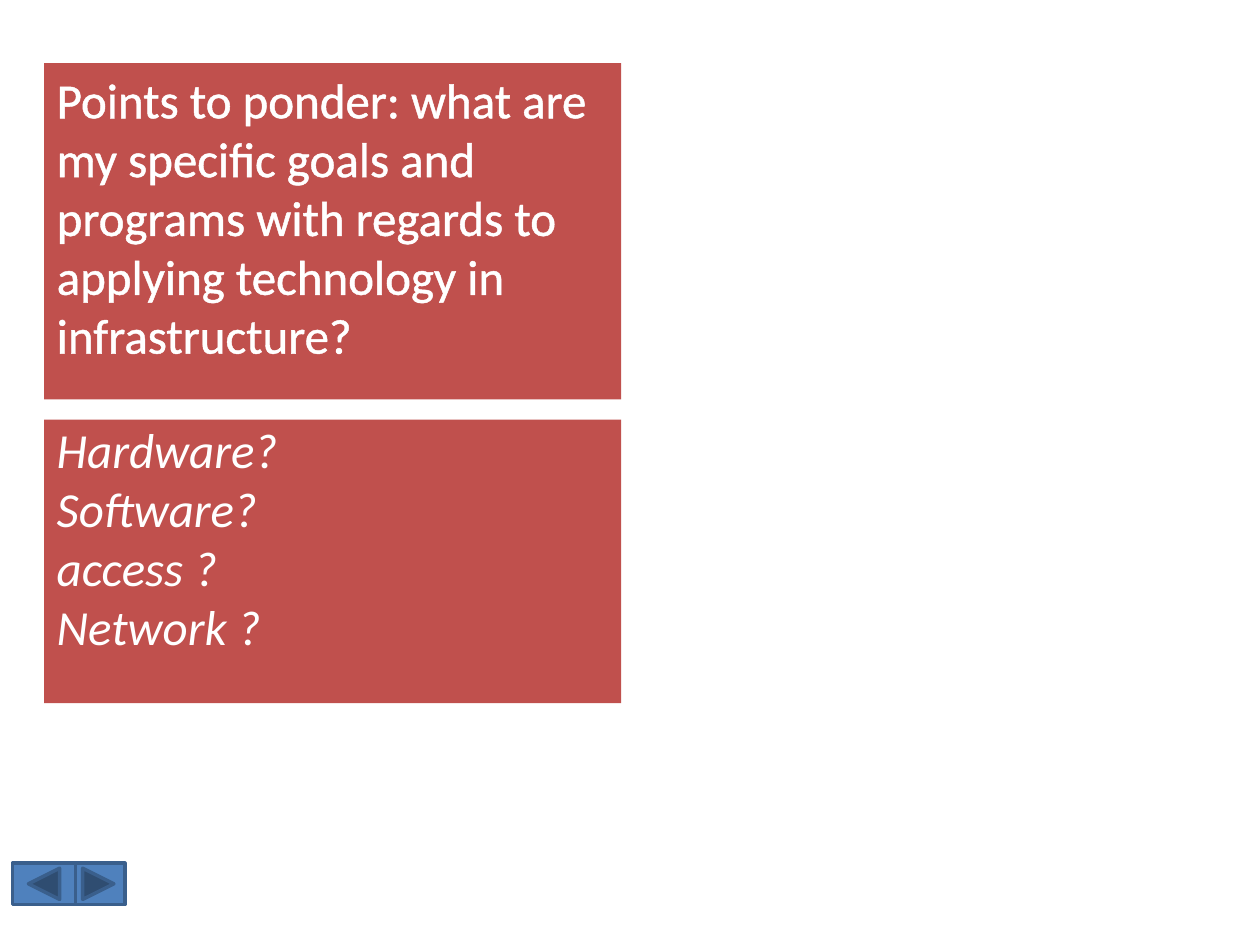
from lxml import etree
from pptx import Presentation, util as u
from pptx.dml.color import RGBColor
from pptx.enum import shapes, text
from pptx.oxml import ns

RED = RGBColor(0xC0, 0x50, 0x4D)
WHITE = RGBColor(0xFF, 0xFF, 0xFF)
BLUE = RGBColor(0x4F, 0x81, 0xBD)
DARK_BLUE = RGBColor(0x3A, 0x5F, 0x8C)

QUESTION = ("Points to ponder: what are my specific goals and programs "
            "with regards to applying technology in infrastructure?")
TOPICS = ["Hardware?", "Software?", "access ?", "Network ?"]


def assign(target, values):
    """Set every attribute named in a dict of format values."""
    for name, value in values.items():
        setattr(target, name, value)


class PonderSlide:
    """Hold the style and the current slide."""

    font = {"name": "Calibri", "size": u.Pt(28), "bold": False}
    para = {"alignment": text.PP_ALIGN.LEFT, "space_before": u.Pt(0)}
    frame = {"word_wrap": True, "auto_size": text.MSO_AUTO_SIZE.NONE,
             "vertical_anchor": text.MSO_ANCHOR.TOP}

    def __init__(self, deck):
        """Add a title and content slide."""
        self.page = deck.slides.add_slide(deck.slide_layouts[1])

    def panel(self, index, top, height, lines, italic=False, margin_top=0.05):
        """Turn a placeholder into a red panel of plain lines."""
        box = self.page.placeholders[index]
        assign(box, {"left": u.Inches(0.35), "top": u.Inches(top),
                     "width": u.Inches(4.58), "height": u.Inches(height)})
        box.fill.solid()
        box.fill.fore_color.rgb = RED
        box.text_frame.text = "\n".join(lines)
        assign(box.text_frame, {**self.frame, "margin_top": u.Inches(margin_top)})
        for para in box.text_frame.paragraphs:
            assign(para, self.para)
            properties = para._p.get_or_add_pPr()
            properties.set("marL", "0")
            properties.set("indent", "0")
            etree.SubElement(properties, ns.qn("a:buNone"))
            for span in para.runs:
                assign(span.font, {**self.font, "italic": italic})
                span.font.color.rgb = WHITE
        return box

    def outline(self, box, width):
        """Draw a white outline around the letters of a box."""
        for para in box.text_frame.paragraphs:
            for span in para.runs:
                line = etree.Element(ns.qn("a:ln"), w=str(u.Pt(width)))
                fill = etree.SubElement(line, ns.qn("a:solidFill"))
                etree.SubElement(fill, ns.qn("a:srgbClr"), val=str(WHITE))
                span._r.get_or_add_rPr().insert(0, line)

    def button(self, kind, left, width):
        """Add a navigation button at the foot of the slide."""
        button = self.page.shapes.add_shape(
            kind, u.Inches(left), u.Inches(6.85), u.Inches(width), u.Inches(0.33))
        button.shadow.inherit = False
        button.fill.solid()
        button.fill.fore_color.rgb = BLUE
        button.line.color.rgb = DARK_BLUE
        button.line.width = u.Pt(2)


def main():
    """Build and save the deck."""
    deck = Presentation()
    assign(deck, {"slide_width": u.Inches(10), "slide_height": u.Inches(7.5)})
    slide = PonderSlide(deck)
    question = slide.panel(0, 0.5, 2.67, [QUESTION])
    slide.outline(question, 1.45)
    slide.panel(1, 3.33, 2.25, TOPICS, italic=True, margin_top=0)
    slide.button(shapes.MSO_SHAPE.ACTION_BUTTON_FORWARD_OR_NEXT, 0.57, 0.42)
    slide.button(shapes.MSO_SHAPE.ACTION_BUTTON_BACK_OR_PREVIOUS, 0.1, 0.5)
    deck.save("out.pptx")


if __name__ == "__main__":
    main()
